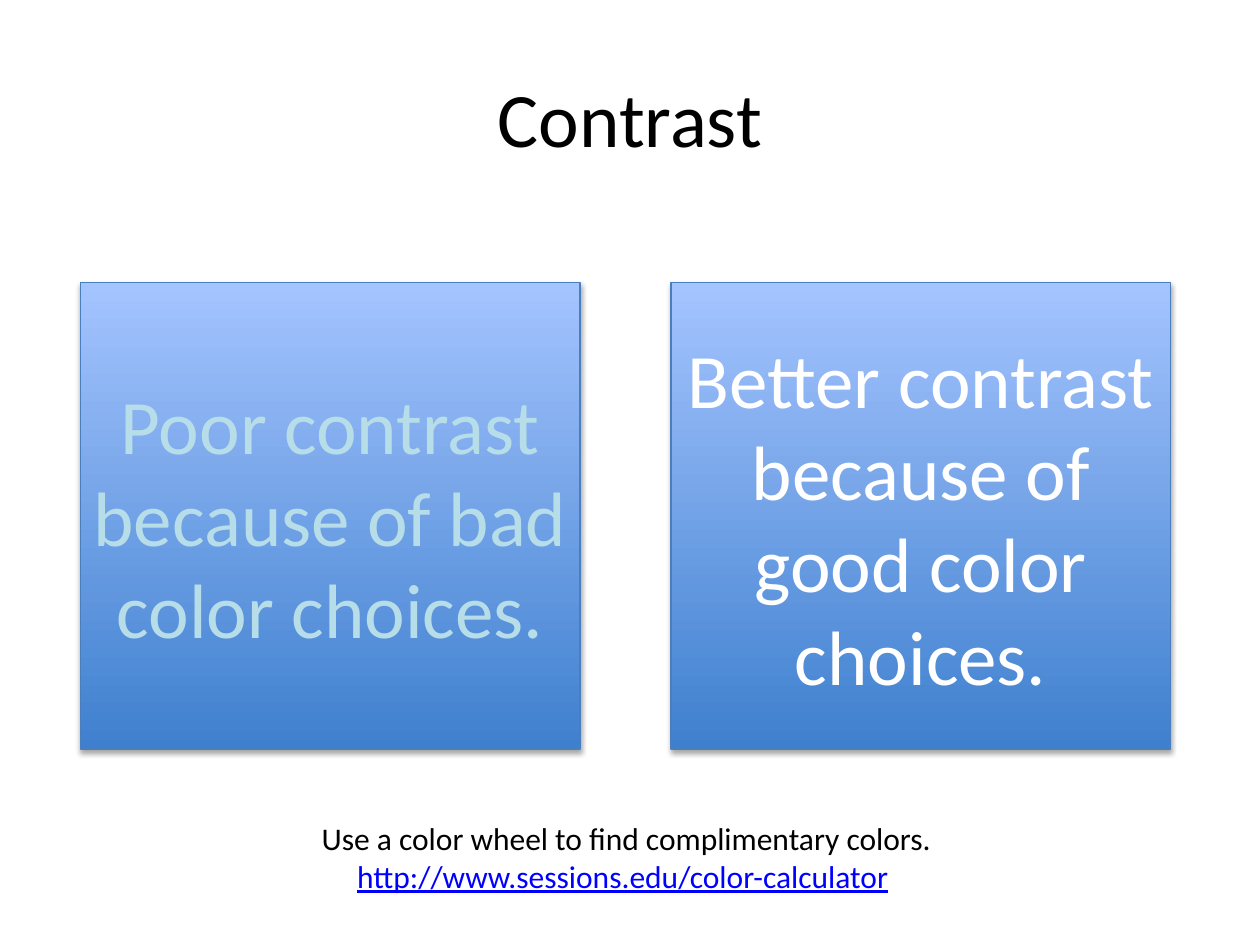
import pptx
import pptx.dml.color
import pptx.enum.shapes
import pptx.enum.text
import pptx.oxml
import pptx.oxml.ns
import pptx.util

Pt = pptx.util.Pt

COLORS = {
    "text": "000000",
    "pale": "B7DEE8",
    "white": "FFFFFF",
    "link": "0000FF",
    "panel_bottom": "3F80CE",
    "panel_top": "A4C4FF",
    "panel_line": "4B7EBC",
}


class ContrastSlide:
    font_name = "Calibri"
    large_size = 44
    note_size = 18

    def __init__(self, presentation):
        self.slide = presentation.slides.add_slide(presentation.slide_layouts[5])

    def color(self, name):
        return pptx.dml.color.RGBColor.from_string(COLORS[name])

    def format_run(self, run, size, color):
        run.font.name = self.font_name
        run.font.size = Pt(size)
        run.font.color.rgb = self.color(color)

    def set_text(self, shape, text, size, color, anchor):
        text_frame = shape.text_frame
        text_frame.text = text
        text_frame.vertical_anchor = anchor
        paragraph = text_frame.paragraphs[0]
        paragraph.alignment = pptx.enum.text.PP_ALIGN.CENTER
        for run in paragraph.runs:
            self.format_run(run, size, color)
        return paragraph

    def title(self, text, left, top, width, height):
        shape = self.slide.shapes.title
        shape.left, shape.top = Pt(left), Pt(top)
        shape.width, shape.height = Pt(width), Pt(height)
        self.set_text(shape, text, self.large_size, "text", pptx.enum.text.MSO_ANCHOR.MIDDLE)

    def panel(self, text, color, left, top, width, height):
        shape = self.slide.shapes.add_shape(
            pptx.enum.shapes.MSO_SHAPE.RECTANGLE, Pt(left), Pt(top), Pt(width), Pt(height)
        )
        shape.fill.gradient()
        shape.fill.gradient_angle = 90
        stops = zip(shape.fill.gradient_stops, (0, 1), ("panel_bottom", "panel_top"))
        for stop, position, stop_color in stops:
            stop.position = position
            stop.color.rgb = self.color(stop_color)
        shape.line.color.rgb = self.color("panel_line")
        shape.line.width = Pt(0.75)
        self.drop_shadow(shape)
        shape.text_frame.word_wrap = True
        self.set_text(shape, text, self.large_size, color, pptx.enum.text.MSO_ANCHOR.MIDDLE)

    def drop_shadow(self, shape):
        shape.shadow.inherit = False
        effects = shape.element.spPr.find(pptx.oxml.ns.qn("a:effectLst"))
        effects.append(pptx.oxml.parse_xml(
            f'<a:outerShdw {pptx.oxml.ns.nsdecls("a")} blurRad="{Pt(3.1)}" '
            f'dist="{Pt(1.8)}" dir="5400000" rotWithShape="0">'
            f'<a:srgbClr val="{COLORS["text"]}"><a:alpha val="35000"/></a:srgbClr>'
            '</a:outerShdw>'
        ))

    def note(self, text, address, left, top, width, height):
        shape = self.slide.shapes.add_textbox(Pt(left), Pt(top), Pt(width), Pt(height))
        shape.text_frame.word_wrap = False
        shape.text_frame.auto_size = pptx.enum.text.MSO_AUTO_SIZE.SHAPE_TO_FIT_TEXT
        paragraph = self.set_text(
            shape, text, self.note_size, "text", pptx.enum.text.MSO_ANCHOR.TOP
        )
        paragraph.add_line_break()
        for run_text, color in ((address, "link"), (" ", "text")):
            run = paragraph.add_run()
            run.text = run_text
            self.format_run(run, self.note_size, color)
            run.font.underline = color == "link"


def main():
    presentation = pptx.Presentation()
    presentation.slide_width = Pt(720)
    presentation.slide_height = Pt(540)

    contrast = ContrastSlide(presentation)
    contrast.title("Contrast", 36, 21.6, 648, 90)
    panels = (
        ("Poor contrast because of bad color choices.", "pale", 46),
        ("Better contrast because of good color choices.", "white", 383.5),
    )
    for text, color, left in panels:
        contrast.panel(text, color, left, 161.5, 285.5, 266.5)
    contrast.note(
        "Use a color wheel to find complimentary colors.",
        "http://www.sessions.edu/color-calculator",
        174, 464.5, 368, 51,
    )
    presentation.save("out.pptx")


if __name__ == "__main__":
    main()
